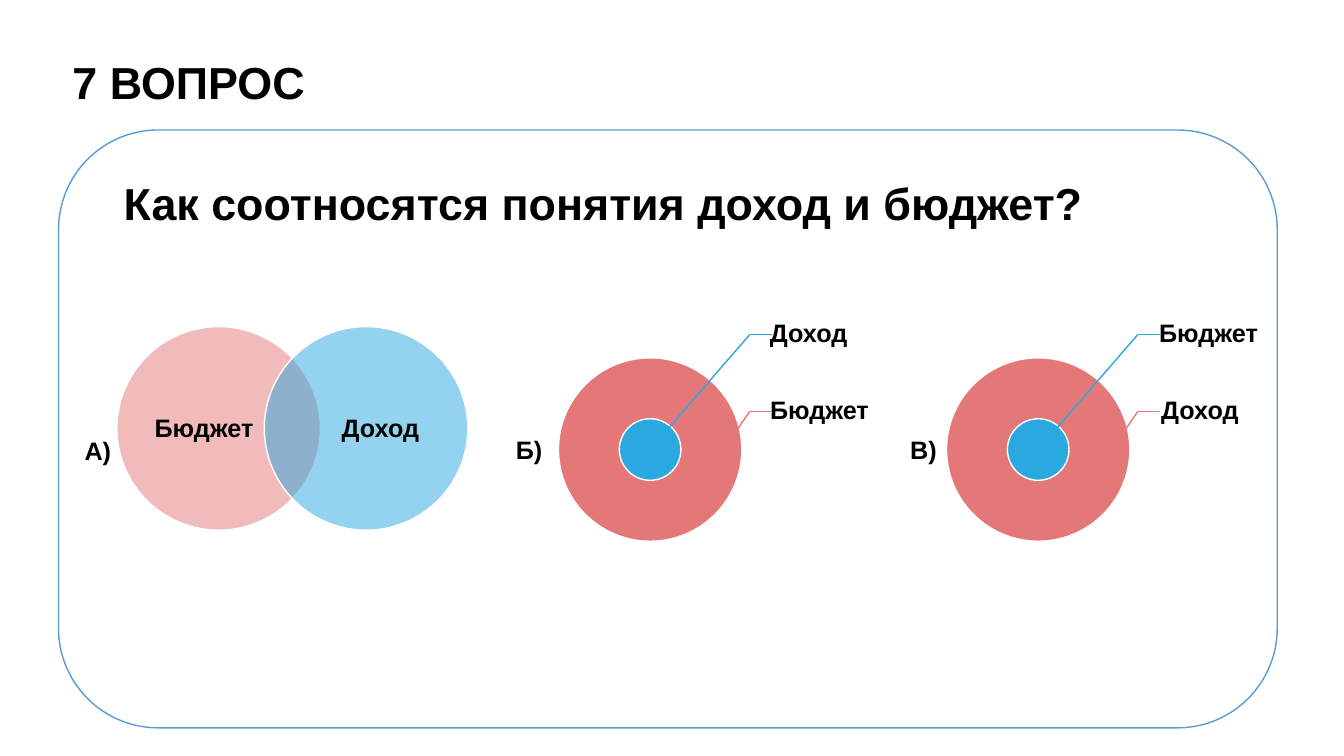
import dataclasses
import lxml.etree
import pptx
import pptx.dml.color
import pptx.enum.shapes
import pptx.enum.text
import pptx.oxml.ns
import pptx.util

Pt = pptx.util.Pt
qn = pptx.oxml.ns.qn
RGB = pptx.dml.color.RGBColor.from_string
SHAPE = pptx.enum.shapes.MSO_SHAPE
ALIGN = pptx.enum.text.PP_ALIGN
ANCHOR = pptx.enum.text.MSO_ANCHOR
AUTO = pptx.enum.text.MSO_AUTO_SIZE


@dataclasses.dataclass(frozen=True)
class Theme:
    font: str = "Arial"
    ink: str = "000000"
    white: str = "FFFFFF"
    frame: str = "5B9BD5"
    red: str = "E47878"
    blue: str = "2AA9E0"
    heading: int = 32
    label: int = 18
    stroke: int = 1


class Deck:
    def __init__(self, prs, theme):
        self.theme = theme
        self.slide = prs.slides.add_slide(prs.slide_layouts[6])
        self.shapes = self.slide.shapes

    def begin_group(self):
        self.shapes = self.slide.shapes.add_group_shape().shapes

    def end_group(self):
        self.shapes = self.slide.shapes

    def shape(self, kind, x, y, w, h, fill, line=None, opacity=100):
        s = self.shapes.add_shape(kind, Pt(x), Pt(y), Pt(w), Pt(h))
        s.shadow.inherit = False
        s.fill.solid()
        s.fill.fore_color.rgb = RGB(fill)
        if opacity < 100:
            color = s._element.spPr.find(qn("a:solidFill"))[0]
            lxml.etree.SubElement(color, qn("a:alpha"), val=str(opacity * 1000))
        if line:
            s.line.color.rgb = RGB(line)
            s.line.width = Pt(self.theme.stroke)
        else:
            s.line.fill.background()
        return s

    def circle(self, x, y, d, fill, opacity=100):
        return self.shape(SHAPE.OVAL, x, y, d, d, fill, self.theme.white, opacity)

    def set_text(self, s, text, size, insets, align=ALIGN.LEFT,
                 anchor=ANCHOR.TOP, spacing=None):
        tf = s.text_frame
        tf.word_wrap = True
        tf.vertical_anchor = anchor
        tf.margin_left, tf.margin_top, tf.margin_right, tf.margin_bottom = map(Pt, insets)
        p = tf.paragraphs[0]
        p.alignment = align
        if spacing:
            p.line_spacing = spacing
        r = p.add_run()
        r.text = text
        r.font.name = self.theme.font
        r.font.size = Pt(size)
        r.font.bold = True
        r.font.color.rgb = RGB(self.theme.ink)
        return p

    def text(self, x, y, w, h, text, size, insets, grow=True, **style):
        s = self.shapes.add_textbox(Pt(x), Pt(y), Pt(w), Pt(h))
        p = self.set_text(s, text, size, insets, **style)
        s.text_frame.auto_size = AUTO.SHAPE_TO_FIT_TEXT if grow else AUTO.NONE
        return p

    def line(self, x1, y1, x2, y2, color):
        c = self.shapes.add_connector(
            pptx.enum.shapes.MSO_CONNECTOR.STRAIGHT, Pt(x1), Pt(y1), Pt(x2), Pt(y2))
        c.line.color.rgb = RGB(color)
        c.line.width = Pt(self.theme.stroke)
        lxml.etree.SubElement(c._element.spPr, qn("a:effectLst"))

    def option(self, x, y, letter):
        self.text(x, y, 44.6, 29, letter, self.theme.label, (7.2, 3.6, 7.2, 3.6))

    def venn(self, x, y, d, sets):
        self.begin_group()
        for i, (name, color, text_x) in enumerate(sets):
            self.circle(x + i * 105.3, y, d, color, 50)
            self.text(text_x, y + 17.3, 84.2, 111.6, name, self.theme.label,
                      (0, 0, 0, 0), grow=False, align=ALIGN.CENTER,
                      anchor=ANCHOR.MIDDLE, spacing=0.9)
        self.end_group()

    def target(self, x, y, labels):
        t = self.theme
        outer, inner, row = 131, 44, 54.9
        inset = (outer - inner) / 2
        self.begin_group()
        self.circle(x, y, outer, t.red)
        self.circle(x + inset, y + inset, inner, t.blue)
        tips = ((t.blue, 65.5, 65.5), (t.red, 97, 95.8))
        for i, ((name, label_x, w), (color, dx, dy)) in enumerate(zip(labels, tips)):
            top = y - 44 + i * row
            mid = top + row / 2
            elbow = x + 136.6
            s = self.shape(SHAPE.RECTANGLE, label_x, top, w, row, t.white, opacity=50)
            self.set_text(s, name, t.label, (10, 2.2, 2.2, 2.2),
                          anchor=ANCHOR.MIDDLE, spacing=0.9)
            self.line(elbow, mid, elbow + 16, mid, color)
            self.line(elbow, mid, x + dx, y + dy, color)
        self.end_group()


def main():
    prs = pptx.Presentation()
    prs.slide_width, prs.slide_height = Pt(960), Pt(540)
    t = Theme()
    deck = Deck(prs, t)
    income, budget = "Доход", "Бюджет"

    deck.text(51.8, 33.1, 729.4, 51.8, "7 ВОПРОС", t.heading,
              (0, 0, 7.2, 7.2), spacing=1.15)
    deck.shape(SHAPE.ROUNDED_RECTANGLE, 41.8, 92.9, 870.5, 427, t.white, t.frame)
    question = deck.text(72.7, 118.1, 818.6, 53.3,
                         "Как соотносятся понятия доход и бюджет?", t.heading,
                         (7.2, 7.2, 7.2, 7.2), align=ALIGN.JUSTIFY)
    question._p.get_or_add_pPr().set("marL", str(Pt(8.6)))

    deck.venn(83.5, 233.3, 145.4, ((budget, t.red, 103.7), (income, t.blue, 229.7)))
    deck.target(398.9, 255.6, ((income, 540, 89.3), (budget, 540, 90)))
    deck.option(361.4, 306.7, "Б)")
    deck.target(676.1, 255.6, ((budget, 817.9, 87.1), (income, 819.4, 85)))
    deck.option(643, 306.7, "В)")
    deck.option(53.3, 307.4, "А)")
    prs.save("out.pptx")


if __name__ == "__main__":
    main()
